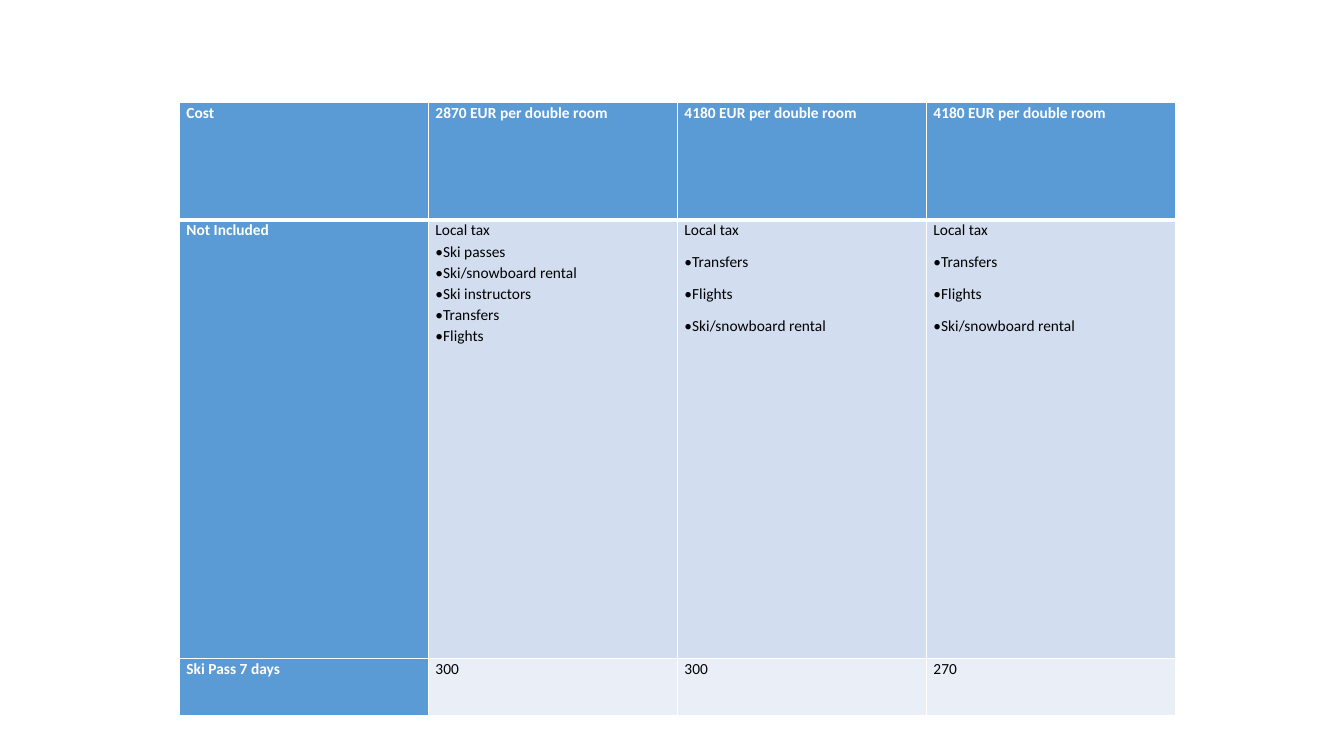
"""Build a slide with a table comparing the costs of three ski trips."""
from dataclasses import dataclass

from lxml import etree
from pptx import Presentation
from pptx.dml.color import RGBColor
from pptx.enum.text import MSO_ANCHOR, PP_ALIGN
from pptx.oxml.ns import qn
from pptx.table import _Cell
from pptx.util import Inches, Length, Pt

TOP = MSO_ANCHOR.TOP
LEFT = PP_ALIGN.LEFT
BLANK_LAYOUT = 6
SLIDE_WIDTH = Inches(13.33)
SLIDE_HEIGHT = Inches(7.5)
TABLE_LEFT = 13.35
TABLE_TOP = 13.6
COLUMN_WIDTH = 18.53
COLUMN_COUNT = 4
COLORS = {"header": "5B9BD5", "options": "D2DEEF", "pass": "EAEFF7", "white": "FFFFFF", "text": "000000"}


@dataclass(frozen=True)
class TableRow:
    label: str
    values: tuple[str, ...]
    height: float
    fill: str
    spacing: tuple[float, ...] = (0, 0, 0)
    is_header: bool = False


TRANSFER_EXTRAS = "Local tax\n•Transfers\n•Flights\n•Ski/snowboard rental"
ROWS = (
    TableRow(
        "Cost",
        ("2870 EUR per double room", "4180 EUR per double room", "4180 EUR per double room"),
        height=15.47,
        fill="header",
        is_header=True,
    ),
    TableRow(
        "Not Included",
        (
            "Local tax\n•Ski passes\n•Ski/snowboard rental\n•Ski instructors\n•Transfers\n•Flights",
            TRANSFER_EXTRAS,
            TRANSFER_EXTRAS,
        ),
        height=58,
        fill="options",
        spacing=(0.6, 8.2, 8.2),
    ),
    TableRow("Ski Pass 7 days", ("300", "300", "270"), height=7.6, fill="pass"),
)


def across(percent: float) -> Length:
    return Length(round(SLIDE_WIDTH * percent / 100))


def down(percent: float) -> Length:
    return Length(round(SLIDE_HEIGHT * percent / 100))


def write_text(cell: _Cell, text: str, *, color: str, bold: bool, space_after: float = 0) -> None:
    cell.margin_left = cell.margin_right = Inches(0.07)
    cell.margin_top = cell.margin_bottom = 0
    cell.vertical_anchor = TOP
    cell.text = text
    paragraphs = cell.text_frame.paragraphs
    for paragraph in paragraphs:
        paragraph.alignment = LEFT
        paragraph.line_spacing = 1.07
        paragraph.space_after = Pt(0 if paragraph is paragraphs[-1] else space_after)
        for run in paragraph.runs:
            run.font.name = "Calibri"
            run.font.size = Pt(11)
            run.font.bold = bold
            run.font.color.rgb = RGBColor.from_string(COLORS[color])


def add_borders(cell: _Cell, *, top: float, bottom: float) -> None:
    properties = cell._tc.get_or_add_tcPr()
    for side, width in (("L", 1), ("R", 1), ("T", top), ("B", bottom)):
        line = etree.SubElement(properties, qn(f"a:ln{side}"), w=str(Pt(width)))
        fill = etree.SubElement(line, qn("a:solidFill"))
        etree.SubElement(fill, qn("a:srgbClr"), val=COLORS["white"])


def format_cell(cell: _Cell, row: TableRow, *, fill: str, after_header: bool) -> None:
    add_borders(cell, top=3 if after_header else 1, bottom=3 if row.is_header else 1)
    cell.fill.solid()
    cell.fill.fore_color.rgb = RGBColor.from_string(COLORS[fill])


def main() -> None:
    presentation = Presentation()
    presentation.slide_width = SLIDE_WIDTH
    presentation.slide_height = SLIDE_HEIGHT
    slide = presentation.slides.add_slide(presentation.slide_layouts[BLANK_LAYOUT])
    table = slide.shapes.add_table(
        len(ROWS),
        COLUMN_COUNT,
        across(TABLE_LEFT),
        down(TABLE_TOP),
        across(COLUMN_WIDTH * COLUMN_COUNT),
        down(sum(row.height for row in ROWS)),
    ).table
    table.horz_banding = False
    table.first_col = True
    for column in table.columns:
        column.width = across(COLUMN_WIDTH)
    for row_index, row in enumerate(ROWS):
        table.rows[row_index].height = down(row.height)
        after_header = row_index > 0 and ROWS[row_index - 1].is_header
        texts = (row.label, *row.values)
        for column_index, (text, space_after) in enumerate(zip(texts, (0, *row.spacing))):
            cell = table.cell(row_index, column_index)
            is_heading = row.is_header or column_index == 0
            color = "white" if is_heading else "text"
            write_text(cell, text, color=color, bold=is_heading, space_after=space_after)
            format_cell(cell, row, fill="header" if is_heading else row.fill, after_header=after_header)
    presentation.save("out.pptx")


if __name__ == "__main__":
    main()
